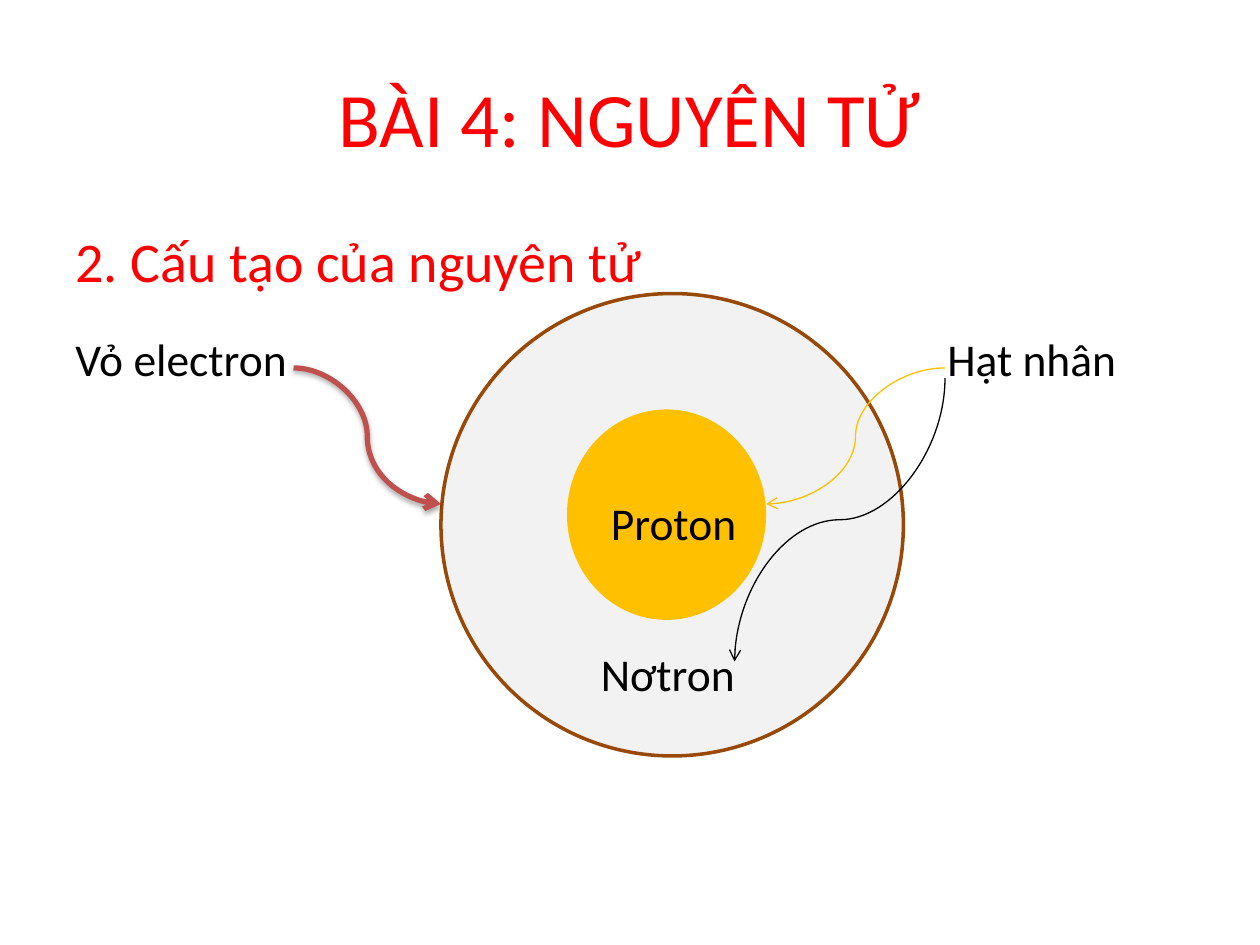
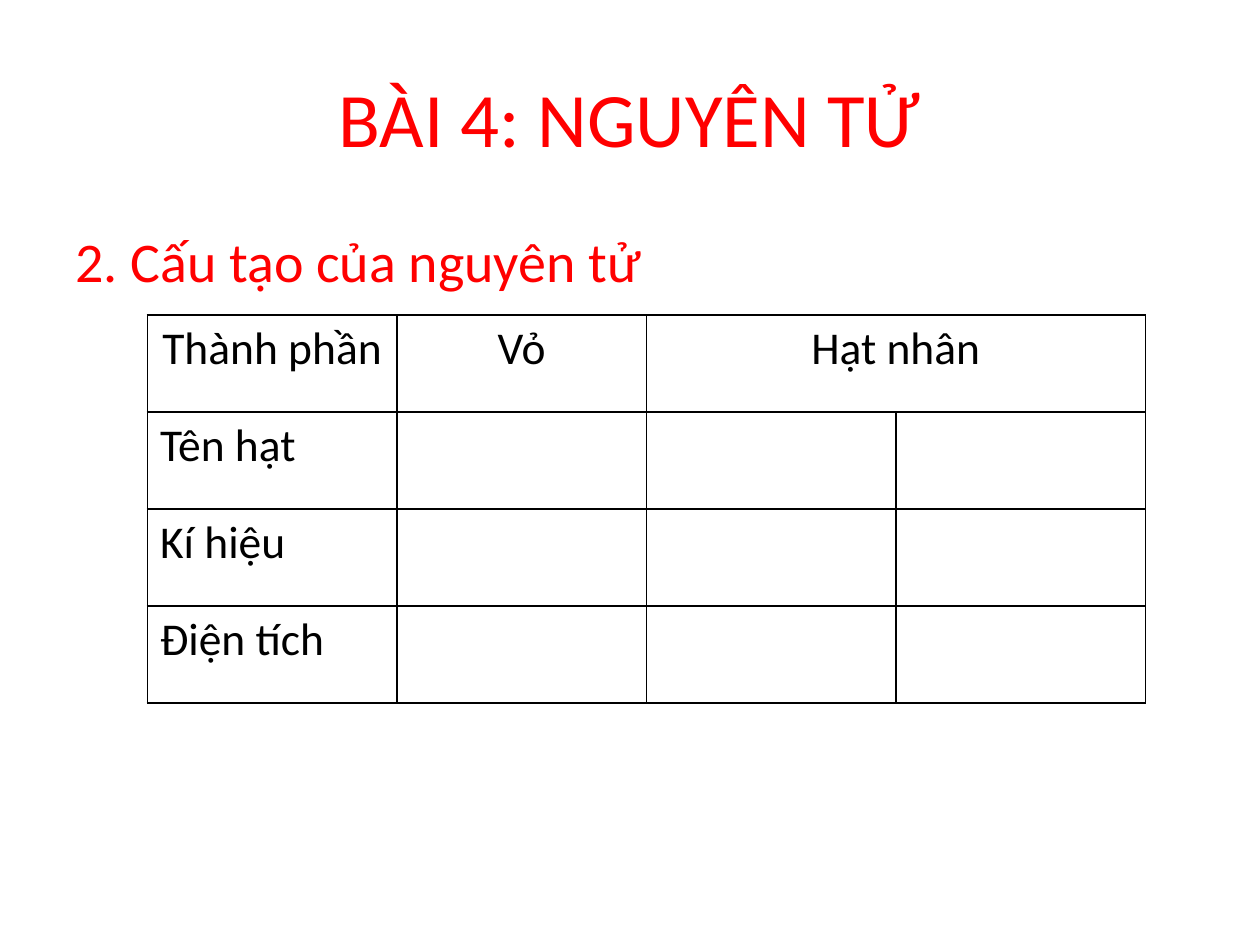
from lxml import etree
from pptx import Presentation
from pptx.dml.color import RGBColor
from pptx.enum.shapes import MSO_CONNECTOR, MSO_SHAPE
from pptx.enum.text import MSO_ANCHOR, PP_ALIGN
from pptx.oxml import parse_xml
from pptx.oxml.ns import nsdecls, qn
from pptx.util import Inches, Pt

CURVE = MSO_CONNECTOR.CURVE
OVAL = MSO_SHAPE.OVAL
CENTER, LEFT = PP_ALIGN.CENTER, PP_ALIGN.LEFT
MIDDLE, TOP = MSO_ANCHOR.MIDDLE, MSO_ANCHOR.TOP

FONT = "Calibri"
RED, BLACK, GOLD = "FF0000", "000000", "FFC000"
SHELL_FILL, SHELL_LINE, SHELL_ARROW = "F2F2F2", "984807", "C0504D"
LABEL_SIZE = 26


def color(value):
    return RGBColor.from_string(value)


def write(tf, text, size, ink, align=LEFT):
    p = tf.paragraphs[0]
    p.alignment = align
    r = p.add_run()
    r.text = text
    r.font.name = FONT
    r.font.size = Pt(size)
    r.font.color.rgb = color(ink)
    return p


def add_text(slide, box, text, size, ink=BLACK, align=LEFT, anchor=TOP):
    sp = slide.shapes.add_textbox(*map(Inches, box))
    tf = sp.text_frame
    tf.word_wrap = True
    tf.vertical_anchor = anchor
    return write(tf, text, size, ink, align)


def add_lesson_slide(prs):
    slide = prs.slides.add_slide(prs.slide_layouts[6])
    add_text(slide, (0.5, 0.3, 9, 1.25), "BÀI 4: NGUYÊN TỬ", 44, RED, CENTER, MIDDLE)
    p = add_text(slide, (0.5, 1.75, 9, 4.95), "2. Cấu tạo của nguyên tử", 32, RED)
    p_pr = p._p.get_or_add_pPr()
    p_pr.set("marL", str(Inches(0.56)))
    p_pr.set("indent", str(-Inches(0.56)))
    return slide


def add_circle(slide, box, fill, line=None):
    sp = slide.shapes.add_shape(OVAL, *map(Inches, box))
    sp.shadow.inherit = False
    sp.fill.solid()
    sp.fill.fore_color.rgb = color(fill)
    if line:
        sp.line.color.rgb = color(line)
        sp.line.width = Pt(2)
    else:
        sp.line.fill.background()


def add_arrow(slide, start, end, ink, width, upright=False, shadow=False):
    (x1, y1), (x2, y2) = start, end
    if upright:
        mid_x, mid_y = (x1 + x2) / 2, (y1 + y2) / 2
        half_w, half_h = (y2 - y1) / 2, (x1 - x2) / 2
        x1, x2 = mid_x - half_w, mid_x + half_w
        y1, y2 = mid_y - half_h, mid_y + half_h
    cxn = slide.shapes.add_connector(CURVE, *map(Inches, (x1, y1, x2, y2)))
    cxn.line.color.rgb = color(ink)
    cxn.line.width = Pt(width)
    sp_pr = cxn._element.spPr
    if upright:
        sp_pr.xfrm.set("rot", "5400000")
    etree.SubElement(cxn.line._get_or_add_ln(), qn("a:tailEnd"), type="arrow")
    effects = etree.SubElement(sp_pr, qn("a:effectLst"))
    if shadow:
        outer = etree.SubElement(effects, qn("a:outerShdw"), blurRad="40000",
                                 dist="23000", dir="5400000", rotWithShape="0")
        ink_el = etree.SubElement(outer, qn("a:srgbClr"), val=BLACK)
        etree.SubElement(ink_el, qn("a:alpha"), val="35000")


def add_atom(slide, left, top):
    def at(x, y):
        return left + x, top + y

    add_circle(slide, (*at(0, 0), 3.67, 3.67), SHELL_FILL, SHELL_LINE)
    add_circle(slide, (*at(1, 0.92), 1.58, 1.67), GOLD)
    labels = [("Hạt nhân", 3.92, 0.25), ("Vỏ electron", -3, 0.25),
              ("Proton", 1.25, 1.55), ("Nơtron", 1.17, 2.75)]
    for text, x, y in labels:
        add_text(slide, (*at(x, y), 2.67, 0.54), text, LABEL_SIZE)
    add_arrow(slide, at(-1.17, 0.59), at(0, 1.67), SHELL_ARROW, 3, shadow=True)
    add_arrow(slide, at(4, 0.59), at(2.58, 1.67), GOLD, 0.75)
    add_arrow(slide, at(4, 0.67), at(2.33, 2.92), BLACK, 0.75, upright=True)


def style_cell(cell):
    cell.fill.background()
    tc_pr = cell._tc.get_or_add_tcPr()
    for i, side in enumerate("LRTB"):
        tc_pr.insert(i, parse_xml(
            f'<a:ln{side} {nsdecls("a")} w="12700"><a:solidFill>'
            f'<a:srgbClr val="{BLACK}"/></a:solidFill></a:ln{side}>'))


def add_particle_table(slide, box):
    headers = ["Thành phần", "Vỏ", "Hạt nhân"]
    properties = ["Tên hạt", "Kí hiệu", "Điện tích"]
    table = slide.shapes.add_table(4, 4, *map(Inches, box)).table
    table.first_row = table.horz_banding = False
    for cell in table.iter_cells():
        style_cell(cell)
    table.cell(0, 2).merge(table.cell(0, 3))
    for col, text in enumerate(headers):
        write(table.cell(0, col).text_frame, text, LABEL_SIZE, BLACK, CENTER)
    for row, text in enumerate(properties, 1):
        write(table.cell(row, 0).text_frame, text, LABEL_SIZE, BLACK)


def main():
    prs = Presentation()
    prs.slide_width, prs.slide_height = Inches(10), Inches(7.5)
    add_atom(add_lesson_slide(prs), 3.5, 2.33)
    add_particle_table(add_lesson_slide(prs), (1.17, 2.5, 7.92, 3.08))
    prs.save("out.pptx")


if __name__ == "__main__":
    main()
